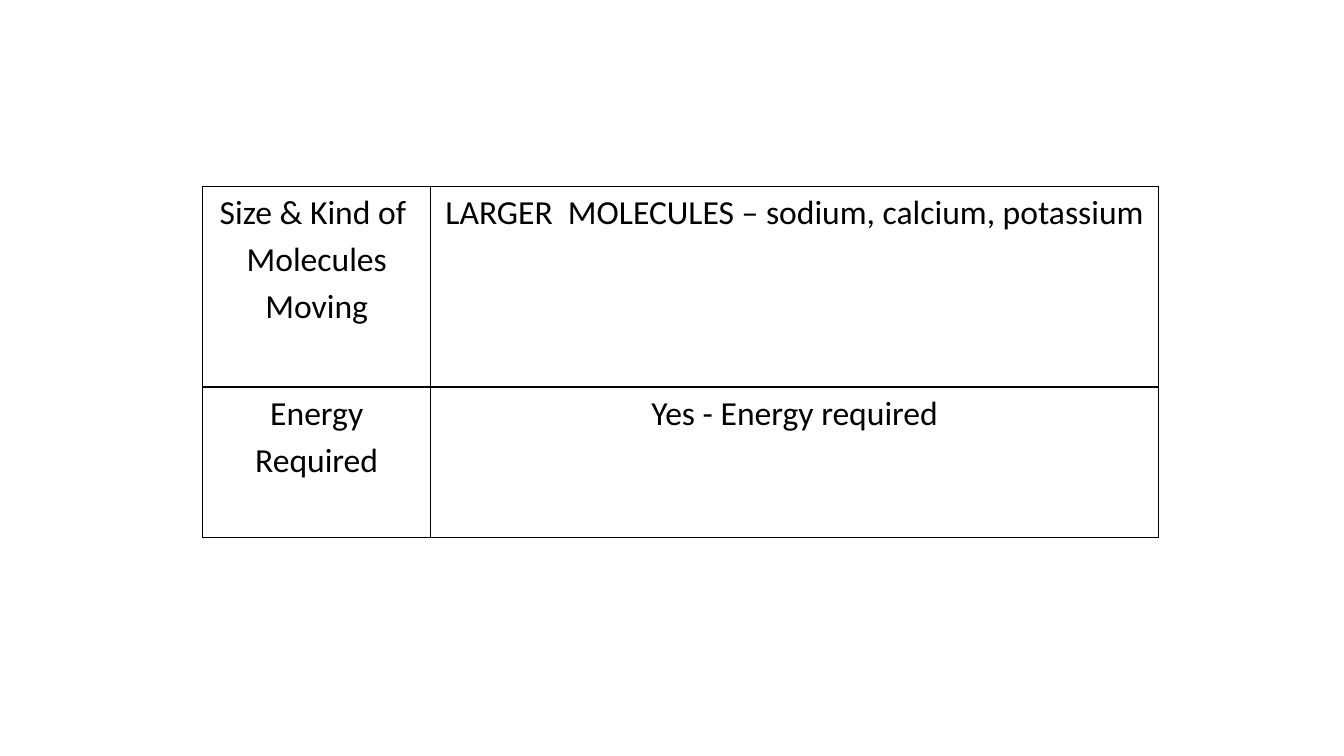
from lxml import etree
from pptx import Presentation
from pptx.dml.color import RGBColor
from pptx.enum.text import PP_ALIGN
from pptx.oxml.ns import qn
from pptx.util import Pt

CENTER = PP_ALIGN.CENTER

ROWS = [
    ("Size & Kind of \nMolecules Moving", "LARGER  MOLECULES – sodium, calcium, potassium"),
    ("Energy Required", "Yes - Energy required"),
]
COLUMN_WIDTHS = [162.9, 519.9]
ROW_HEIGHTS = [143.4, 107.2]
TABLE_LEFT, TABLE_TOP = 144.8, 133.1
SIDE_MARGIN = 5.2
BLACK, WHITE = "000000", "FFFFFF"


def color(value):
    return RGBColor.from_string(value)


def add_borders(cell):
    properties = cell._tc.get_or_add_tcPr()
    for side in ("lnL", "lnR", "lnT", "lnB"):
        line = etree.SubElement(properties, qn(f"a:{side}"), w=str(Pt(1)))
        fill = etree.SubElement(line, qn("a:solidFill"))
        etree.SubElement(fill, qn("a:srgbClr"), val=BLACK)


def fill_cell(cell, text):
    add_borders(cell)
    cell.fill.solid()
    cell.fill.fore_color.rgb = color(WHITE)
    cell.margin_left = cell.margin_right = Pt(SIDE_MARGIN)
    cell.margin_top = cell.margin_bottom = Pt(0)
    cell.text_frame.text = text
    for para in cell.text_frame.paragraphs:
        para.alignment = CENTER
        para.line_spacing = 1.15
        for span in para.runs:
            span.font.name = "Calibri"
            span.font.size = Pt(24)
            span.font.bold = False
            span.font.color.rgb = color(BLACK)


def main():
    deck = Presentation()
    deck.slide_width, deck.slide_height = Pt(960), Pt(540)
    page = deck.slides.add_slide(deck.slide_layouts[6])
    table = page.shapes.add_table(
        len(ROWS), len(COLUMN_WIDTHS), Pt(TABLE_LEFT), Pt(TABLE_TOP),
        Pt(sum(COLUMN_WIDTHS)), Pt(sum(ROW_HEIGHTS)),
    ).table
    table.first_row = table.horz_banding = False
    for column, width in zip(table.columns, COLUMN_WIDTHS):
        column.width = Pt(width)
    for row, height, texts in zip(table.rows, ROW_HEIGHTS, ROWS):
        row.height = Pt(height)
        for cell, text in zip(row.cells, texts):
            fill_cell(cell, text)
    deck.save("out.pptx")


if __name__ == "__main__":
    main()
